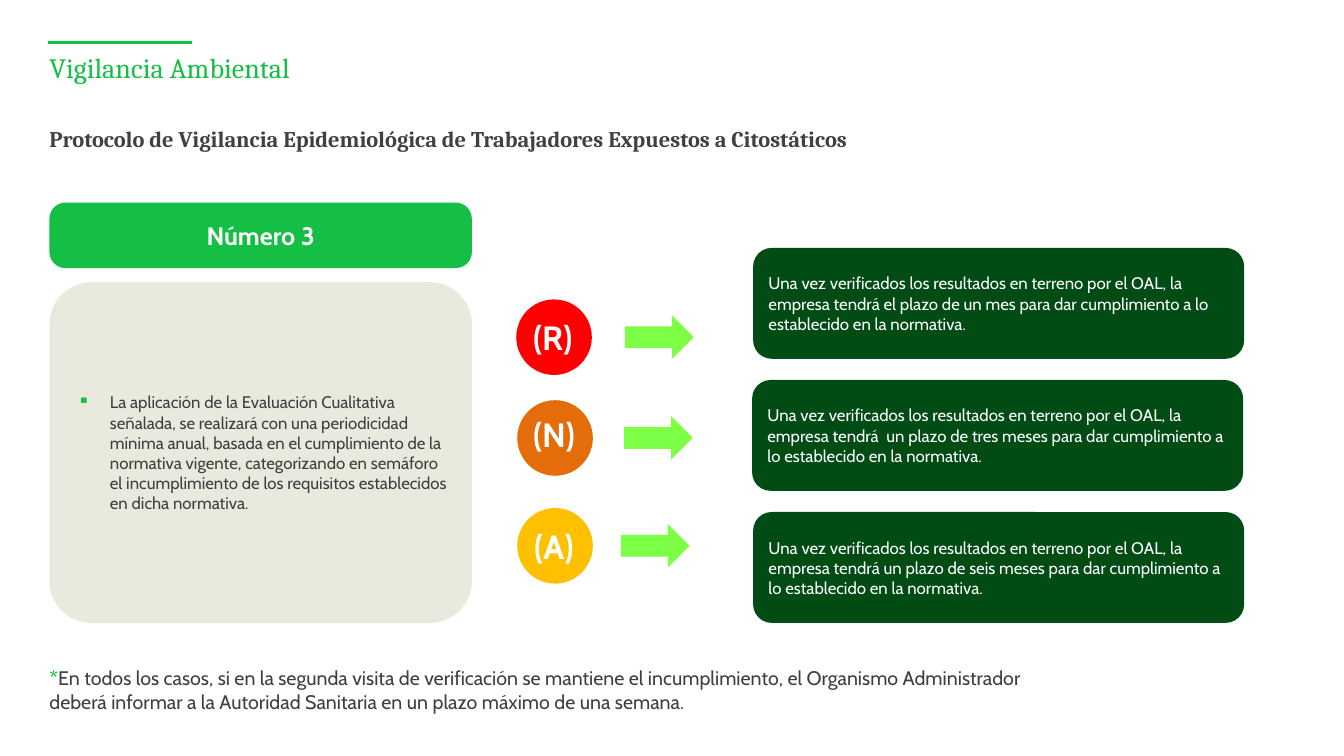
from lxml import etree
from pptx import Presentation
from pptx.dml.color import RGBColor
from pptx.enum.shapes import MSO_CONNECTOR, MSO_SHAPE
from pptx.enum.text import MSO_ANCHOR, PP_ALIGN
from pptx.oxml.ns import qn
from pptx.util import Inches, Pt

ROUNDED = MSO_SHAPE.ROUNDED_RECTANGLE
ELLIPSE = MSO_SHAPE.OVAL
ARROW = MSO_SHAPE.RIGHT_ARROW
STRAIGHT = MSO_CONNECTOR.STRAIGHT
MIDDLE = MSO_ANCHOR.MIDDLE
TOP = MSO_ANCHOR.TOP
LEFT = PP_ALIGN.LEFT
CENTER = PP_ALIGN.CENTER

GREEN = RGBColor(0x15, 0xBF, 0x45)
DARK_GREEN = RGBColor(0x00, 0x4C, 0x14)
LIME = RGBColor(0x7C, 0xFF, 0x44)
BEIGE = RGBColor(0xE9, 0xEA, 0xDD)
GRAY = RGBColor(0x40, 0x40, 0x40)
TEXT_GRAY = RGBColor(0x3F, 0x3F, 0x3F)
WHITE = RGBColor(0xFF, 0xFF, 0xFF)
RED = RGBColor(0xFF, 0x00, 0x00)
ORANGE = RGBColor(0xE4, 0x6C, 0x0A)
AMBER = RGBColor(0xFF, 0xC0, 0x00)

HEADING_FONT = "Cambria"
BODY_FONT = "Cabin"

DEADLINE = (
    "Una vez verificados los resultados en terreno por el OAL, la empresa tendrá "
    "{} para dar cumplimiento a lo establecido en la normativa."
)
EVALUATION = (
    "La aplicación de la Evaluación Cualitativa señalada, se realizará con una "
    "periodicidad mínima anual, basada en el cumplimiento de la normativa vigente, "
    "categorizando en semáforo el incumplimiento de los requisitos establecidos en "
    "dicha normativa."
)
FOOTNOTE = (
    "En todos los casos, si en la segunda visita de verificación se mantiene el "
    "incumplimiento, el Organismo Administrador deberá informar a la Autoridad "
    "Sanitaria en un plazo máximo de una semana."
)


def add_span(para, text, size=12, color=WHITE, bold=False, font=BODY_FONT):
    span = para.add_run()
    span.text = text
    span.font.name = font
    span.font.size = Pt(size)
    span.font.bold = bold
    span.font.color.rgb = color


class SlideBuilder:
    """Draws styled elements on the current slide."""

    def __init__(self, page):
        self.shapes = page.shapes

    def rule(self, left, top, right, color, width):
        line = self.shapes.add_connector(
            STRAIGHT, Inches(left), Inches(top), Inches(right), Inches(top)
        )
        line.line.color.rgb = color
        line.line.width = Pt(width)
        etree.SubElement(line._element.spPr, qn("a:effectLst"))

    def shape(self, kind, left, top, width, height, fill, corner=None):
        shape = self.shapes.add_shape(
            kind, Inches(left), Inches(top), Inches(width), Inches(height)
        )
        shape.shadow.inherit = False
        shape.fill.solid()
        shape.fill.fore_color.rgb = fill
        shape.line.fill.background()
        if corner is not None:
            shape.adjustments[0] = corner
        return shape

    def card(self, left, top, width, height, fill, text, corner=0.167,
             align=LEFT, bullet=None, **style):
        card = self.shape(ROUNDED, left, top, width, height, fill, corner)
        frame = card.text_frame
        frame.word_wrap = True
        frame.vertical_anchor = MIDDLE
        para = frame.paragraphs[0]
        para.alignment = align
        if bullet:
            self.bullet(para, bullet)
        add_span(para, text, **style)

    def bullet(self, para, color):
        properties = para._p.get_or_add_pPr()
        properties.set("marL", str(Inches(0.38)))
        properties.set("indent", str(-Inches(0.32)))
        tint = etree.SubElement(properties, qn("a:buClr"))
        etree.SubElement(tint, qn("a:srgbClr"), val=str(color))
        etree.SubElement(properties, qn("a:buChar"), char="▪")

    def text(self, left, top, width, height, spans, inset=0, wrap=True, spacing=None):
        box = self.shapes.add_textbox(
            Inches(left), Inches(top), Inches(width), Inches(height)
        )
        frame = box.text_frame
        frame.word_wrap = wrap
        frame.vertical_anchor = TOP
        frame.margin_left = frame.margin_right = Inches(inset)
        frame.margin_top = frame.margin_bottom = Inches(inset / 2)
        para = frame.paragraphs[0]
        para.line_spacing = spacing
        for text, style in spans:
            add_span(para, text, **style)


def main():
    deck = Presentation()
    deck.slide_width = Inches(13.33)
    deck.slide_height = Inches(7.5)
    builder = SlideBuilder(deck.slides.add_slide(deck.slide_layouts[6]))

    builder.rule(0.48, 0.42, 1.9, GREEN, 1.75)
    title = dict(size=20, color=GREEN, font=HEADING_FONT)
    builder.text(0.49, 0.54, 10.79, 0.57, [("Vigilancia Ambiental", title)], spacing=0.9)
    subtitle = dict(size=16, color=GRAY, bold=True, font=HEADING_FONT)
    protocol = "Protocolo de Vigilancia Epidemiológica de Trabajadores Expuestos a Citostáticos"
    builder.text(0.49, 1.27, 10.79, 0.39, [(protocol, subtitle)], spacing=0.9)

    builder.card(0.49, 2.8, 4.19, 3.38, BEIGE, EVALUATION, corner=0.123,
                 bullet=GREEN, color=TEXT_GRAY)
    builder.card(0.49, 2.01, 4.19, 0.65, GREEN, "Número 3", corner=0.245,
                 align=CENTER, size=18, bold=True)

    levels = [
        ("(R)", RED, "el plazo de un mes", (5.12, 2.97), (5.19, 3.09, 0.62), 6.2, 7.47),
        ("(N)", ORANGE, " un plazo de tres meses", (5.13, 3.97), (5.19, 4.06, 0.64), 6.19, 7.46),
        ("(A)", AMBER, "un plazo de seis meses", (5.13, 5.04), (5.2, 5.17, 0.63), 6.16, 7.47),
    ]
    for index, (letter, color, term, circle, label, arrow_left, card_left) in enumerate(levels):
        builder.shape(ELLIPSE, *circle, 0.75, 0.75, color)
        builder.text(*label, 0.5, [(letter, dict(size=24, bold=True))], inset=0.1, wrap=False)
        builder.shape(ARROW, arrow_left, circle[1] + 0.16, 0.68, 0.43, LIME)
        builder.card(card_left, 2.46 + 1.31 * index, 4.87, 1.1, DARK_GREEN,
                     DEADLINE.format(term))

    builder.text(0.49, 6.61, 10, 0.57, [
        ("*", dict(size=14, color=GREEN, bold=True)),
        (FOOTNOTE, dict(size=14, color=TEXT_GRAY)),
    ])
    deck.save("out.pptx")


if __name__ == "__main__":
    main()
